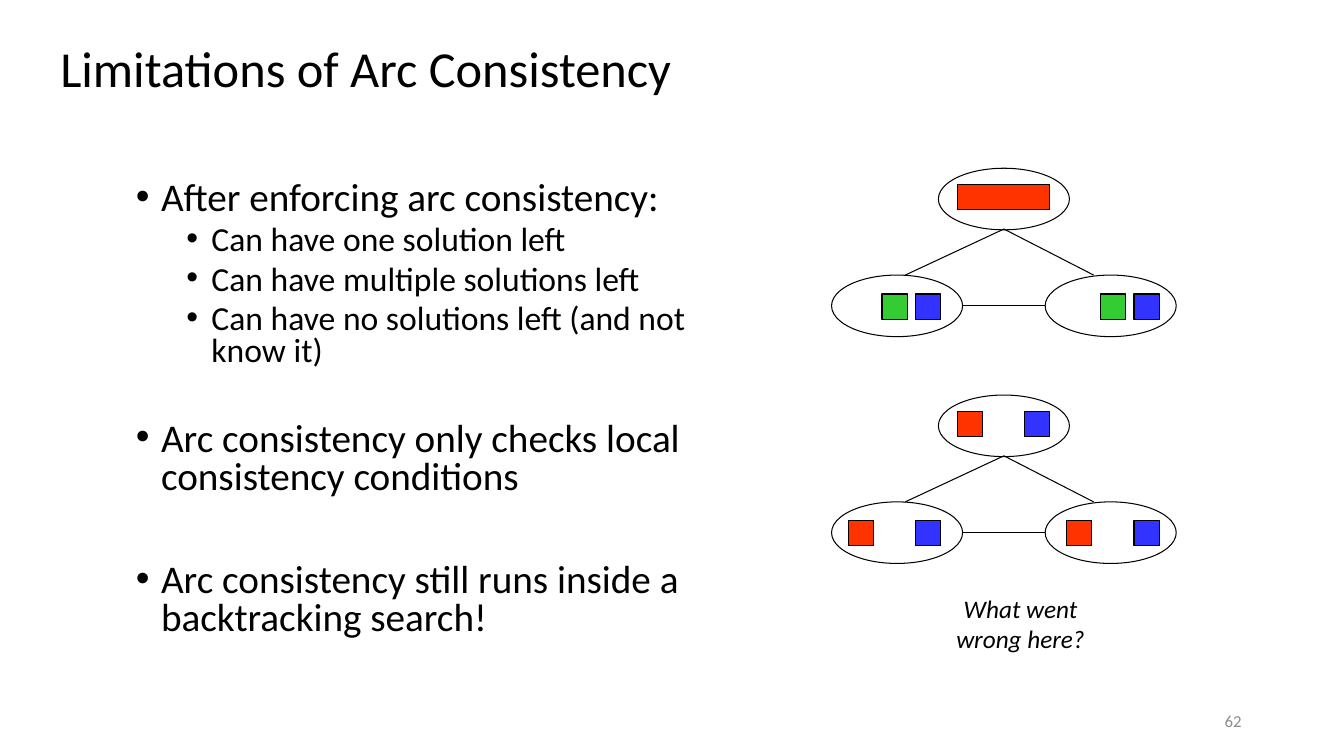
from lxml import etree
from pptx import Presentation
from pptx.dml.color import RGBColor
from pptx.enum.shapes import MSO_CONNECTOR, MSO_SHAPE
from pptx.enum.text import MSO_ANCHOR, PP_ALIGN
from pptx.oxml.ns import qn
from pptx.util import Pt

OVAL, RECT = MSO_SHAPE.OVAL, MSO_SHAPE.RECTANGLE
STRAIGHT = MSO_CONNECTOR.STRAIGHT
TOP, MIDDLE = MSO_ANCHOR.TOP, MSO_ANCHOR.MIDDLE
LEFT, CENTER, RIGHT = PP_ALIGN.LEFT, PP_ALIGN.CENTER, PP_ALIGN.RIGHT

BLACK = RGBColor(0x00, 0x00, 0x00)
GRAY = RGBColor(0x8C, 0x8C, 0x8C)
RED = RGBColor(0xFF, 0x33, 0x00)
GREEN = RGBColor(0x33, 0xCC, 0x33)
BLUE = RGBColor(0x33, 0x33, 0xFF)

FONT = "Calibri"
LINE_WIDTH = 0.75
SQUARE, SLOT_STEP = 18, 24
NODE_WIDTH, NODE_HEIGHT = 93.6, 44

# Offsets of the top, left and right nodes and of their first value slots
NODES = {"top": (76.3, 0), "left": (0, 76.3), "right": (152.6, 76.3)}
SLOTS = {"top": (90, 11.8), "left": (12, 89.8), "right": (168, 89.8)}
ARCS = [(123.1, 43.4, 52.6, 76.3), (123.1, 43.4, 187.2, 76.3),
        (93.6, 98.2, 152.6, 98.2)]

# Each value is (slot, number of slots covered, colour)
GRAPHS = [
    (594, 120.2, {"top": [(0, 3, RED)],
                  "left": [(1, 1, GREEN), (2, 1, BLUE)],
                  "right": [(1, 1, GREEN), (2, 1, BLUE)]}),
    (594, 282.2, {node: [(0, 1, RED), (2, 1, BLUE)] for node in NODES}),
]

# Each bullet is (level, space before, text)
BULLETS = [
    (0, 10, "After enforcing arc consistency:"),
    (1, 5, "Can have one solution left"),
    (1, 5, "Can have multiple solutions left"),
    (1, 5, "Can have no solutions left (and not know it)"),
    (0, 38, "Arc consistency only checks local consistency conditions"),
    (0, 47, "Arc consistency still runs inside a backtracking search!"),
]
LEVEL_SIZES = (28, 24)
LEVEL_INDENTS = (18, 54)


def add_textbox(s, x, y, w, h, anchor=TOP):
    tf = s.shapes.add_textbox(Pt(x), Pt(y), Pt(w), Pt(h)).text_frame
    tf.word_wrap = True
    tf.vertical_anchor = anchor
    return tf


def write(p, text, size, color=BLACK, align=LEFT, italic=False):
    p.text = text
    p.alignment = align
    font = p.runs[0].font
    font.name, font.size, font.italic = FONT, Pt(size), italic
    font.color.rgb = color


def set_bullet(p, indent):
    pPr = p._p.get_or_add_pPr()
    pPr.set("marL", str(Pt(indent)))
    pPr.set("indent", str(-Pt(18)))
    etree.SubElement(pPr, qn("a:buFont")).set("typeface", "Arial")
    etree.SubElement(pPr, qn("a:buChar")).set("char", "•")


def add_bullets(s):
    tf = add_textbox(s, 90, 126, 438, 356.4)
    for i, (level, space, text) in enumerate(BULLETS):
        p = tf.add_paragraph() if i else tf.paragraphs[0]
        write(p, text, LEVEL_SIZES[level])
        p.level = level
        p.line_spacing = 0.8
        p.space_before = Pt(space)
        set_bullet(p, LEVEL_INDENTS[level])


def add_outlined(s, kind, x, y, w, h, fill=None):
    sp = s.shapes.add_shape(kind, Pt(x), Pt(y), Pt(w), Pt(h))
    sp.shadow.inherit = False
    sp.line.color.rgb = BLACK
    sp.line.width = Pt(LINE_WIDTH)
    if fill is None:
        sp.fill.background()
    else:
        sp.fill.solid()
        sp.fill.fore_color.rgb = fill


def add_arc(s, x1, y1, x2, y2):
    line = s.shapes.add_connector(STRAIGHT, Pt(x1), Pt(y1), Pt(x2), Pt(y2))
    line.line.color.rgb = BLACK
    line.line.width = Pt(LINE_WIDTH)
    etree.SubElement(line._element.spPr, qn("a:effectLst"))


def add_graph(s, x, y, domains):
    """Draw three linked nodes with the values left in their domains."""
    for dx, dy in NODES.values():
        add_outlined(s, OVAL, x + dx, y + dy, NODE_WIDTH, NODE_HEIGHT)
    for x1, y1, x2, y2 in ARCS:
        add_arc(s, x + x1, y + y1, x + x2, y + y2)
    for node, values in domains.items():
        dx, dy = SLOTS[node]
        for slot, span, color in values:
            width = SQUARE + (span - 1) * SLOT_STEP
            add_outlined(s, RECT, x + dx + slot * SLOT_STEP, y + dy,
                         width, SQUARE, color)


def main():
    prs = Presentation()
    prs.slide_width, prs.slide_height = Pt(960), Pt(540)
    s = prs.slides.add_slide(prs.slide_layouts[6])

    title = add_textbox(s, 36, 28.8, 828, 44.6, MIDDLE).paragraphs[0]
    write(title, "Limitations of Arc Consistency", 36)
    title.line_spacing = 0.9

    add_bullets(s)
    for x, y, domains in GRAPHS:
        add_graph(s, x, y, domains)

    caption = add_textbox(s, 660, 420, 138, 51).paragraphs[0]
    write(caption, "What went wrong here?", 18, align=CENTER, italic=True)

    number = add_textbox(s, 678, 500.5, 216, 28.8, MIDDLE).paragraphs[0]
    write(number, "62", 12, GRAY, RIGHT)

    prs.save("out.pptx")


if __name__ == "__main__":
    main()
